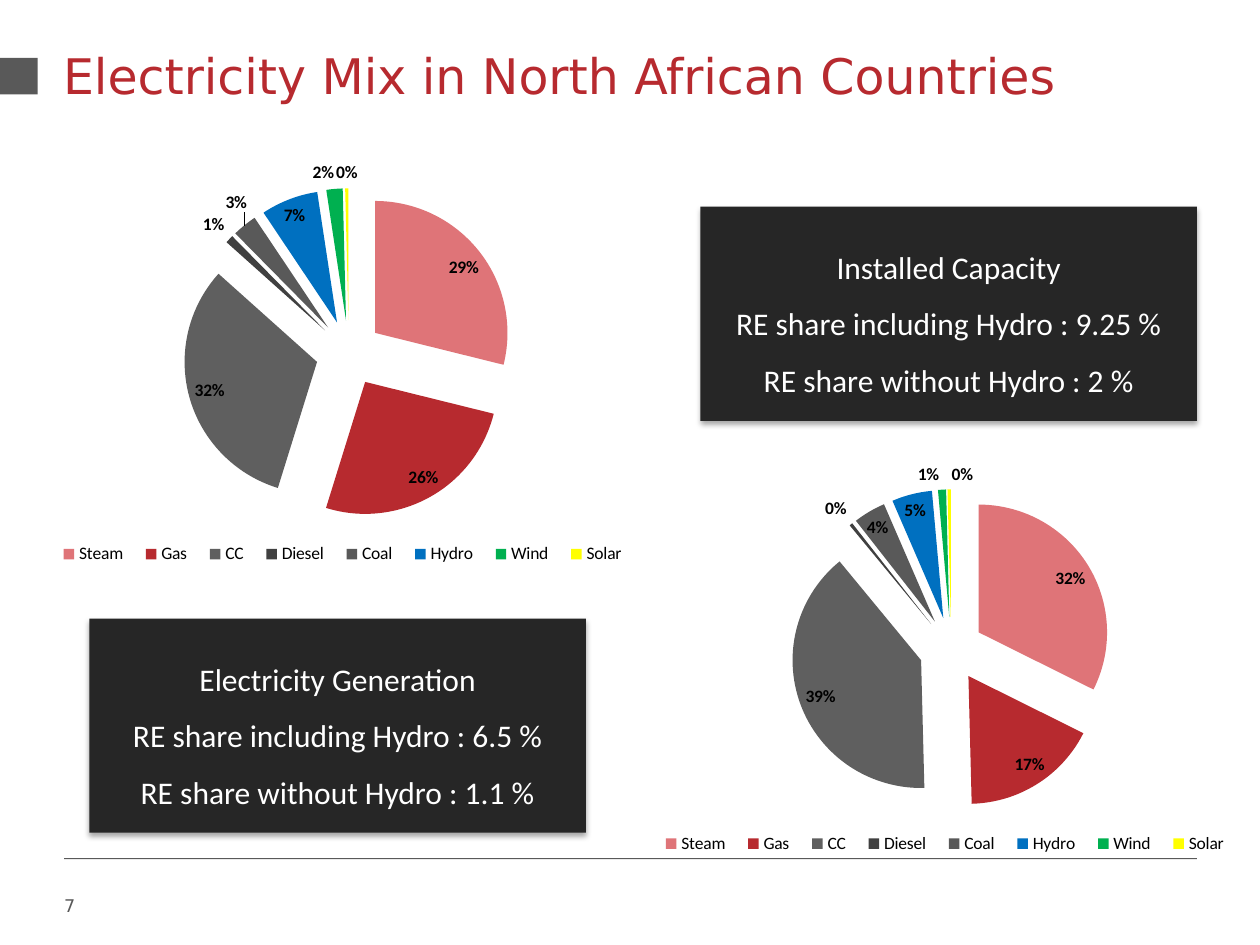
from lxml import etree
from pptx import Presentation
from pptx.chart.data import CategoryChartData
from pptx.dml.color import RGBColor
from pptx.enum import chart as ch, shapes, text
from pptx.oxml import parse_xml
from pptx.oxml.ns import nsdecls, qn
from pptx.util import Inches, Pt

RED = RGBColor(0xB7, 0x2A, 0x2F)
GREY = RGBColor(0x59, 0x59, 0x59)
DARK = RGBColor(0x26, 0x26, 0x26)
WHITE = RGBColor(0xFF, 0xFF, 0xFF)
BLACK = RGBColor(0, 0, 0)
SOURCES = {
    "Steam": RGBColor(0xDF, 0x74, 0x78),
    "Gas": RED,
    "CC": RGBColor(0x5F, 0x5F, 0x5F),
    "Diesel": RGBColor(0x40, 0x40, 0x40),
    "Coal": GREY,
    "Hydro": RGBColor(0, 0x70, 0xC0),
    "Wind": RGBColor(0, 0xB0, 0x50),
    "Solar": RGBColor(0xFF, 0xFF, 0),
}
TRACE = 0.004  # a sliver that rounds to 0% but keeps its slice and label
HEAD_FONT, BODY_FONT = "DejaVu Sans", "Calibri"


def set_font(font, name, size, color):
    font.name, font.size, font.color.rgb = name, Pt(size), color


def add_block(slide, box, color):
    sp = slide.shapes.add_shape(shapes.MSO_SHAPE.RECTANGLE, *map(Inches, box))
    sp.fill.solid()
    sp.fill.fore_color.rgb = color
    sp.line.fill.background()
    sp.shadow.inherit = False
    return sp


def write_line(tf, content, size, color):
    """One left-aligned line at the top of a frame without side insets."""
    tf.word_wrap = True
    tf.margin_left = tf.margin_right = 0
    tf.vertical_anchor = text.MSO_ANCHOR.TOP
    p = tf.paragraphs[0]
    p.text = content
    p.alignment = text.PP_ALIGN.LEFT
    set_font(p.font, HEAD_FONT, size, color)


def add_title(slide, box, content):
    title = slide.shapes.title
    title.left, title.top, title.width, title.height = map(Inches, box)
    write_line(title.text_frame, content, 28, RED)


def add_frame(slide, number):
    # Title marker, footer rule and page number
    add_block(slide, (0, 0.46, 0.3, 0.29), GREY)
    add_block(slide, (0.51, 6.81, 8.99, 0.01), GREY)
    sp = slide.shapes.add_textbox(*map(Inches, (0.51, 7.05, 2.33, 0.52)))
    write_line(sp.text_frame, number, 10, GREY)


def set_layout(part, index, box, target=""):
    """Fix a chart part at box, given as fractions of the chart."""
    for old in part.findall(qn("c:layout")):
        part.remove(old)
    x, y, w, h = box
    part.insert(index, parse_xml(
        f'<c:layout {nsdecls("c")}><c:manualLayout>{target}'
        '<c:xMode val="edge"/><c:yMode val="edge"/>'
        f'<c:x val="{x}"/><c:y val="{y}"/><c:w val="{w}"/><c:h val="{h}"/>'
        '</c:manualLayout></c:layout>'))


def add_mix_pie(slide, box, shares):
    data = CategoryChartData(number_format="0%")
    data.categories = list(SOURCES)
    data.add_series("Series 1", shares)
    chart = slide.shapes.add_chart(
        ch.XL_CHART_TYPE.PIE_EXPLODED, *map(Inches, box), data).chart
    set_font(chart.font, BODY_FONT, 10, BLACK)
    chart.has_title = False
    chart.has_legend = True
    chart.legend.position = ch.XL_LEGEND_POSITION.BOTTOM
    chart.legend.include_in_layout = False

    # Slice colours and labels
    plot = chart.plots[0]
    plot.vary_by_categories = True
    for i, color in enumerate(SOURCES.values()):
        fill = plot.series[0].points[i].format.fill
        fill.solid()
        fill.fore_color.rgb = color
    labels = plot.series[0].data_labels
    labels.show_value = True
    labels.show_percentage = False
    labels.number_format = "0%"
    labels.number_format_is_linked = False
    labels.position = ch.XL_LABEL_POSITION.BEST_FIT
    set_font(labels.font, BODY_FONT, 10, BLACK)
    labels.font.bold = True

    # Pie above, legend in a wide row below it
    set_layout(chart.element.find(".//" + qn("c:plotArea")), 0,
               (0.04, 0.06, 0.94, 0.78), '<c:layoutTarget val="inner"/>')
    set_layout(chart.element.find(".//" + qn("c:legend")), 1,
               (0.03, 0.88, 0.94, 0.09))


def add_summary(slide, box, lines):
    sp = add_block(slide, box, DARK)
    effects = sp.element.spPr.find(qn("a:effectLst"))
    shadow = etree.SubElement(effects, qn("a:outerShdw"), blurRad=str(Pt(3.1)),
                              dist=str(Pt(1.8)), dir="5400000", rotWithShape="0")
    color = etree.SubElement(shadow, qn("a:srgbClr"), val="000000")
    etree.SubElement(color, qn("a:alpha"), val="35000")
    tf = sp.text_frame
    tf.word_wrap = True
    tf.vertical_anchor = text.MSO_ANCHOR.MIDDLE
    tf.text = "\n".join(lines)
    for p in tf.paragraphs:
        p.alignment = text.PP_ALIGN.CENTER
        p.line_spacing = 1.5
        set_font(p.font, BODY_FONT, 18, WHITE)


def main():
    prs = Presentation()
    prs.slide_width, prs.slide_height = Inches(10), Inches(7.5)
    slide = prs.slides.add_slide(prs.slide_layouts[5])
    add_frame(slide, "7")
    add_title(slide, (0.5, 0.31, 9, 0.97), "Electricity Mix in North African Countries")
    add_mix_pie(slide, (0.22, 1.28, 5, 3.37),
                (0.29, 0.26, 0.32, 0.01, 0.03, 0.07, 0.02, TRACE))
    add_mix_pie(slide, (5, 3.67, 5, 3.27),
                (0.32, 0.17, 0.39, TRACE, 0.04, 0.05, 0.01, TRACE))
    add_summary(slide, (5.56, 1.64, 3.94, 1.7),
                ("Installed Capacity", "RE share including Hydro : 9.25 %",
                 "RE share without Hydro : 2 %"))
    add_summary(slide, (0.71, 4.91, 3.94, 1.7),
                ("Electricity Generation", "RE share including Hydro : 6.5 %",
                 "RE share without Hydro : 1.1 %"))
    prs.save("out.pptx")


if __name__ == "__main__":
    main()
